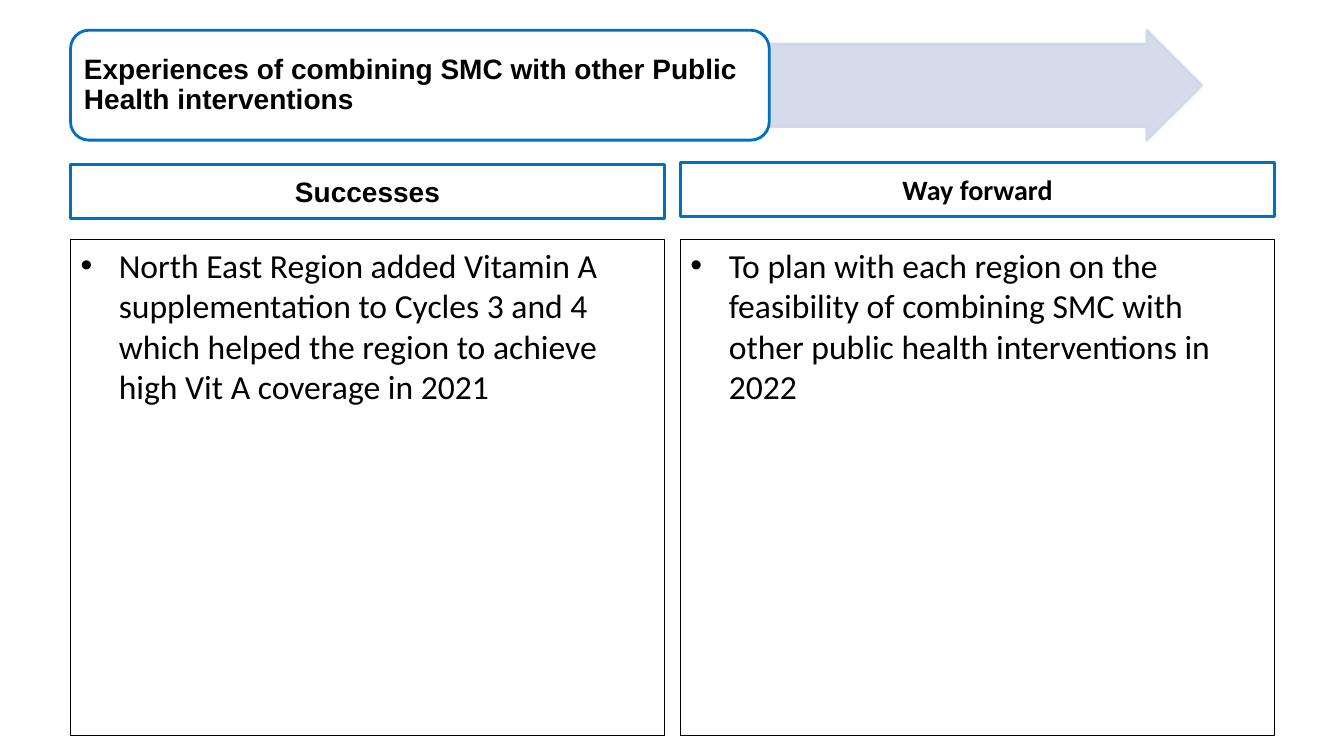
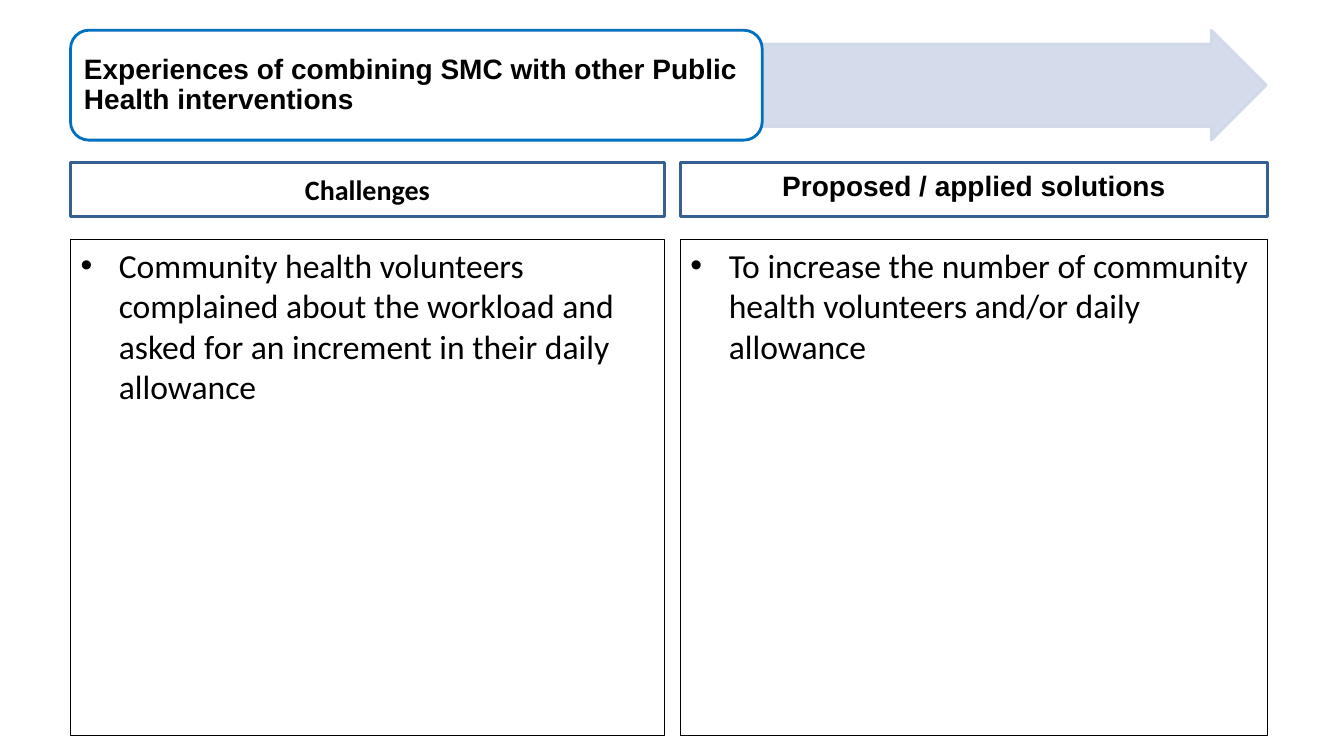
from dataclasses import dataclass

from lxml.etree import SubElement
from pptx import Presentation
from pptx.dml.color import RGBColor
from pptx.enum.shapes import MSO_SHAPE as Preset
from pptx.enum.text import MSO_ANCHOR as Anchor, PP_ALIGN as Align
from pptx.oxml.ns import qn
from pptx.util import Pt

PX = 9144


@dataclass(frozen=True)
class Theme:
    ink: str = "000000"
    paper: str = "FFFFFF"
    accent: str = "0070C0"
    navy: str = "376092"
    arrow: str = "D0D8E8"
    arrow_opacity: int = 90
    heading_font: str = "Arial"
    body_font: str = "Calibri"
    heading_size: int = 20
    body_size: int = 24
    frame_line: float = 2
    panel_line: float = 0.75


def apply_format(target, values):
    for name, value in values.items():
        setattr(target, name, value)


class Board:
    left, middle, column_width = 70, 675, 589
    banner_top, banner_height = 30, 109
    heading_height = 54
    panel_top, panel_height = 238, 492
    hanging = 38

    def __init__(self, deck, theme):
        self.deck = deck
        self.theme = theme
        self.page = None
        self.right = 0

    def start(self, right):
        self.page = self.deck.slides.add_slide(self.deck.slide_layouts[6])
        self.right = right

    def columns(self):
        return ((self.left, self.column_width),
                (self.middle, self.right - self.middle))

    def box(self, preset, area, fill, line, weight):
        box = self.page.shapes.add_shape(preset, *(value * PX for value in area))
        box.shadow.inherit = False
        if fill:
            box.fill.solid()
            box.fill.fore_color.rgb = RGBColor.from_string(fill)
        else:
            box.fill.background()
        box.line.color.rgb = RGBColor.from_string(line)
        box.line.width = Pt(weight)
        return box

    def add_text(self, box, text, font, frame, para_format):
        apply_format(box.text_frame, {"word_wrap": True, **frame})
        para = box.text_frame.paragraphs[0]
        apply_format(para, para_format)
        span = para.add_run()
        span.text = text
        apply_format(span.font, font)
        span.font.color.rgb = RGBColor.from_string(self.theme.ink)
        return para

    def heading_type(self, font_name):
        return {"name": font_name, "size": Pt(self.theme.heading_size), "bold": True}

    def banner(self, text, width, arrow_end):
        theme = self.theme
        start = self.left + width
        arrow = self.box(Preset.RIGHT_ARROW,
                         (start, self.banner_top, arrow_end - start, self.banner_height),
                         theme.arrow, theme.arrow, theme.frame_line)
        arrow.adjustments[0] = 0.75
        arrow.adjustments[1] = 0.5
        for color in arrow.element.spPr.iter(qn("a:srgbClr")):
            SubElement(color, qn("a:alpha"), val=str(theme.arrow_opacity * 1000))
        title = self.box(Preset.ROUNDED_RECTANGLE,
                         (self.left, self.banner_top, width, self.banner_height),
                         theme.paper, theme.accent, theme.frame_line)
        self.add_text(title, text, self.heading_type(theme.heading_font),
                      {"vertical_anchor": Anchor.MIDDLE,
                       "margin_left": 8 * PX, "margin_right": 8 * PX},
                      {"alignment": Align.LEFT, "line_spacing": 0.9})

    def heading(self, column, text, font_name, line, top=161, bottom_margin=5):
        left, width = column
        box = self.box(Preset.RECTANGLE, (left, top, width, self.heading_height),
                       self.theme.paper, line, self.theme.frame_line)
        self.add_text(box, text, self.heading_type(font_name),
                      {"vertical_anchor": Anchor.MIDDLE, "margin_bottom": bottom_margin * PX},
                      {"alignment": Align.CENTER})

    def panel(self, column, text):
        left, width = column
        theme = self.theme
        box = self.box(Preset.RECTANGLE, (left, self.panel_top, width, self.panel_height),
                       None, theme.ink, theme.panel_line)
        para = self.add_text(box, text,
                             {"name": theme.body_font, "size": Pt(theme.body_size)},
                             {"vertical_anchor": Anchor.TOP}, {"alignment": Align.LEFT})
        properties = para._p.get_or_add_pPr()
        properties.set("marL", str(self.hanging * PX))
        properties.set("indent", str(-self.hanging * PX))
        SubElement(properties, qn("a:buFont"), typeface=theme.heading_font)
        SubElement(properties, qn("a:buChar"), char="•")


def main():
    deck = Presentation()
    apply_format(deck, {"slide_width": 1333 * PX, "slide_height": 750 * PX})
    theme = Theme()
    board = Board(deck, theme)
    title = "Experiences of combining SMC with other Public Health interventions"
    pages = [
        {"right": 1264, "title_width": 693, "arrow_end": 1192, "line": theme.accent,
         "columns": [
             ("Successes", theme.heading_font, {"top": 163},
              "North East Region added Vitamin A supplementation to Cycles 3 and 4 "
              "which helped the region to achieve high Vit A coverage in 2021"),
             ("Way forward", theme.body_font, {},
              "To plan with each region on the feasibility of combining SMC with "
              "other public health interventions in 2022")]},
        {"right": 1257, "title_width": 686, "arrow_end": 1256, "line": theme.navy,
         "columns": [
             ("Challenges", theme.body_font, {},
              "Community health volunteers complained about the workload and asked "
              "for an increment in their daily allowance"),
             ("Proposed / applied solutions", theme.heading_font, {"bottom_margin": 13},
              "To increase the number of community health volunteers and/or daily "
              "allowance")]},
    ]
    for content in pages:
        board.start(content["right"])
        board.banner(title, content["title_width"], content["arrow_end"])
        for column, (name, font_name, placing, text) in zip(board.columns(), content["columns"]):
            board.heading(column, name, font_name, content["line"], **placing)
            board.panel(column, text)
    deck.save("out.pptx")


if __name__ == "__main__":
    main()
